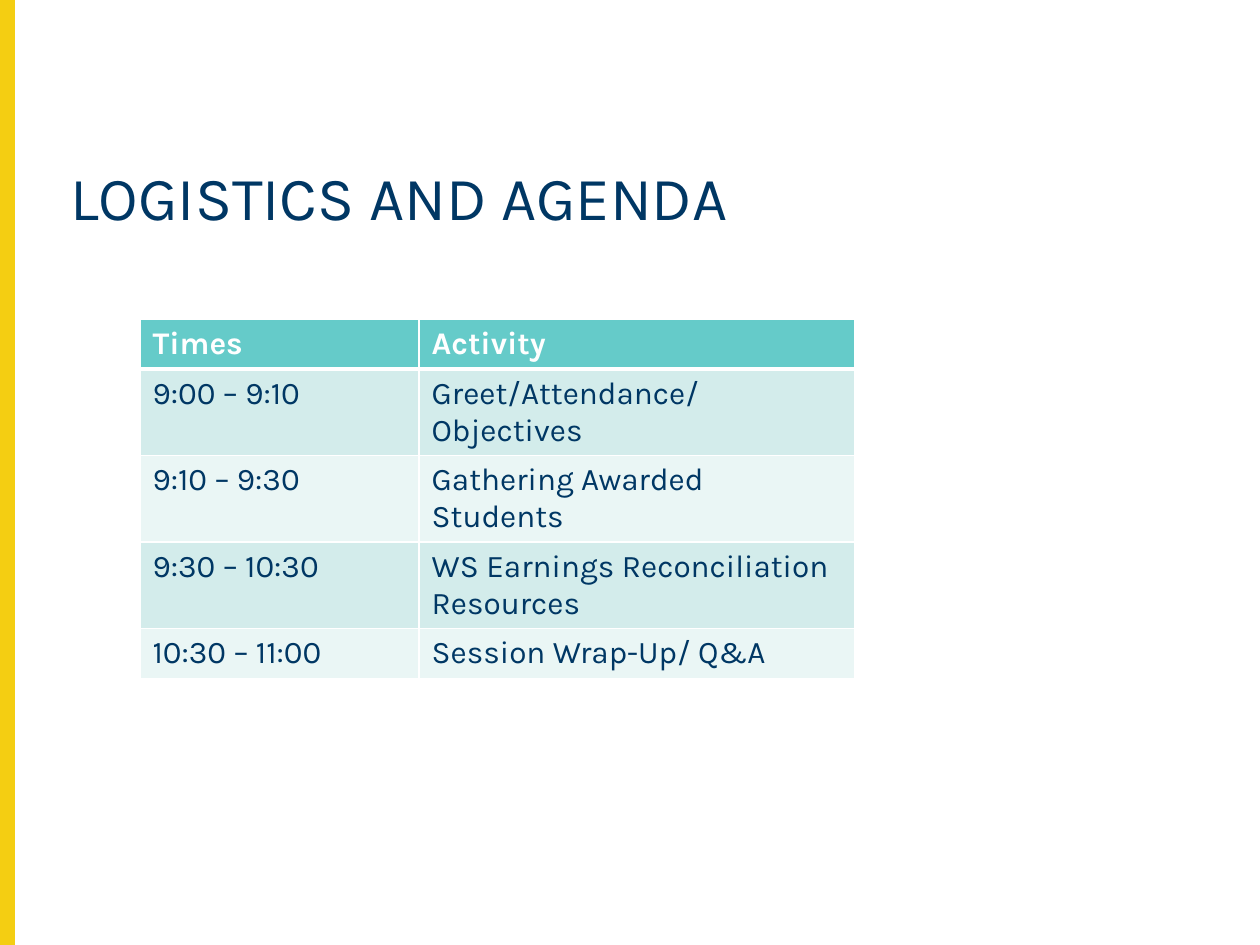
from dataclasses import dataclass

from lxml.etree import SubElement
from pptx import Presentation
from pptx.dml.color import RGBColor
from pptx.enum.shapes import MSO_SHAPE
from pptx.enum.text import MSO_ANCHOR, MSO_AUTO_SIZE, PP_ALIGN
from pptx.oxml.ns import qn
from pptx.util import Pt


@dataclass(frozen=True)
class Theme:
    font: str = "Karla"
    title_size: int = 35
    table_size: int = 18
    navy: str = "003764"
    yellow: str = "F4CE12"
    teal: str = "65CBC9"
    bands: tuple = ("D3ECEB", "EAF6F5")
    white: str = "FFFFFF"


class SlideBuilder:
    def __init__(self, page, theme):
        self.page = page
        self.theme = theme

    def style(self, para, size, color, bold=False):
        para.font.name = self.theme.font
        para.font.size = Pt(size)
        para.font.bold = bold
        para.font.color.rgb = RGBColor.from_string(color)
        para.alignment = PP_ALIGN.LEFT

    def bar(self, left, top, width, height, color):
        bar = self.page.shapes.add_shape(
            MSO_SHAPE.RECTANGLE, Pt(left), Pt(top), Pt(width), Pt(height))
        bar.shadow.inherit = False
        bar.fill.solid()
        bar.fill.fore_color.rgb = RGBColor.from_string(color)
        bar.line.color.rgb = RGBColor.from_string(color)
        bar.line.width = Pt(1)

    def title(self, text, left, top, width, height):
        box = self.page.shapes.title
        box.left, box.top, box.width, box.height = map(Pt, (left, top, width, height))
        frame = box.text_frame
        frame.text = text
        frame.word_wrap = True
        frame.auto_size = MSO_AUTO_SIZE.NONE
        frame.vertical_anchor = MSO_ANCHOR.TOP
        para = frame.paragraphs[0]
        para.line_spacing = 0.9
        self.style(para, self.theme.title_size, self.theme.navy)

    def borders(self, cell, bottom):
        properties = cell._tc.get_or_add_tcPr()
        fill = properties.find(qn("a:solidFill"))
        for side, width in (("L", 1), ("R", 1), ("T", 1), ("B", bottom)):
            line = SubElement(properties, qn(f"a:ln{side}"), w=str(Pt(width)))
            color = SubElement(SubElement(line, qn("a:solidFill")), qn("a:srgbClr"))
            color.set("val", self.theme.white)
        properties.append(fill)  # the schema wants the fill after the borders

    def table(self, rows, left, top, widths, row_height):
        theme = self.theme
        table = self.page.shapes.add_table(
            len(rows), len(widths), Pt(left), Pt(top),
            Pt(sum(widths)), Pt(row_height * len(rows))).table
        for column, width in zip(table.columns, widths):
            column.width = Pt(width)
        for row_index, row in enumerate(rows):
            header = row_index == 0
            fill = theme.teal if header else theme.bands[(row_index - 1) % 2]
            color = theme.white if header else theme.navy
            for column_index, text in enumerate(row):
                cell = table.cell(row_index, column_index)
                cell.text = text
                cell.fill.solid()
                cell.fill.fore_color.rgb = RGBColor.from_string(fill)
                self.style(cell.text_frame.paragraphs[0], theme.table_size, color, header)
                self.borders(cell, 3 if header else 1)
                if row_index == 1:  # match the thick rule under the header
                    cell._tc.tcPr.find(qn("a:lnT")).set("w", str(Pt(3)))


AGENDA = [
    ("Times", "Activity"),
    ("9:00 – 9:10", "Greet/Attendance/Objectives"),
    ("9:10 – 9:30", "Gathering Awarded Students"),
    ("9:30 – 10:30", "WS Earnings Reconciliation Resources"),
    ("10:30 – 11:00", "Session Wrap-Up/ Q&A"),
]


def main():
    deck = Presentation()
    deck.slide_width, deck.slide_height = Pt(720), Pt(540)
    theme = Theme()
    builder = SlideBuilder(deck.slides.add_slide(deck.slide_layouts[5]), theme)

    # Accent bar on the left edge
    builder.bar(0, 0, 8, 540, theme.yellow)

    # Heading
    builder.title("LOGISTICS AND AGENDA", 33, 92, 672, 57)

    # Agenda table
    builder.table(AGENDA, 80, 182.5, (159.5, 249), 26.7)

    deck.save("out.pptx")


if __name__ == "__main__":
    main()
